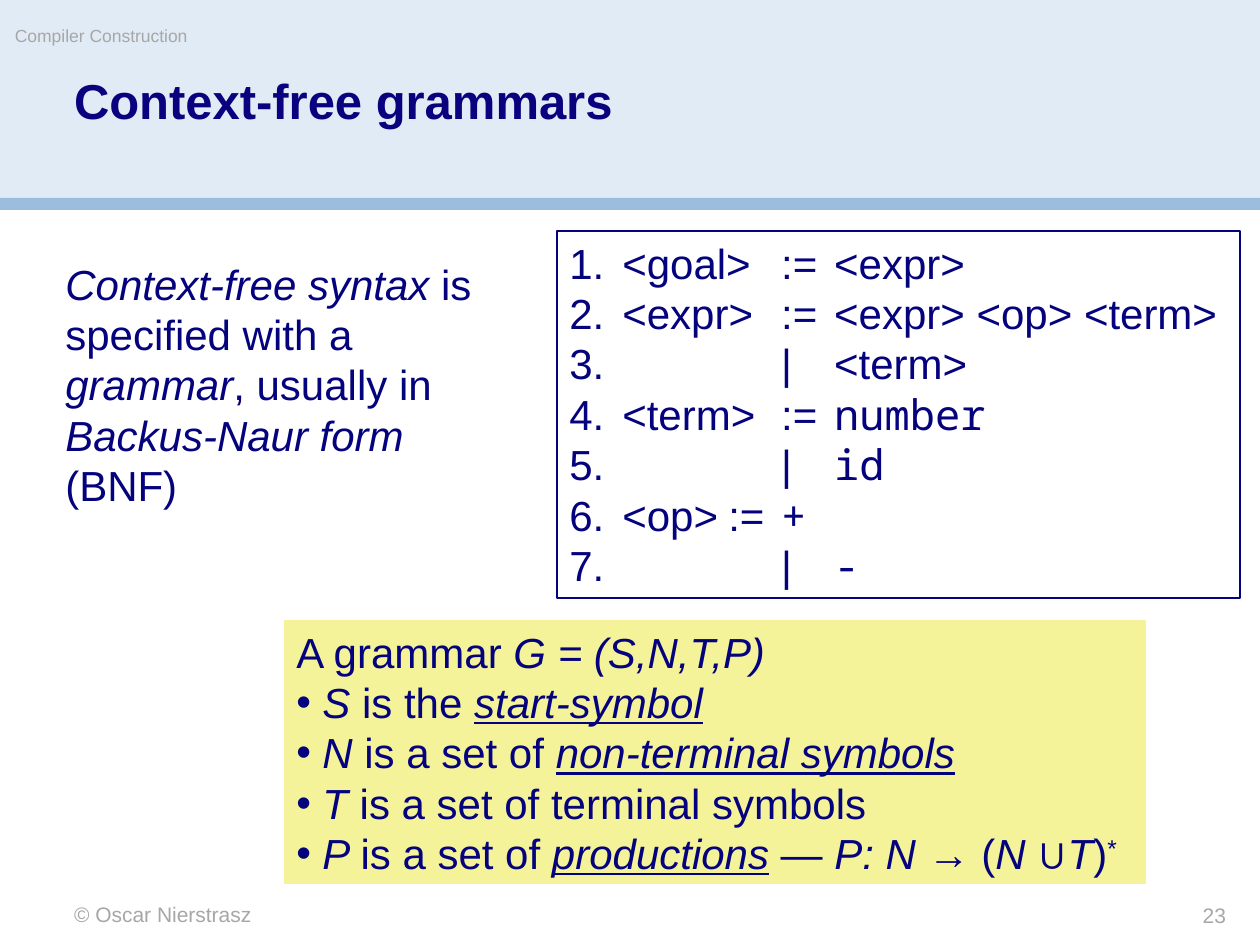
from lxml.etree import SubElement
from pptx import Presentation
from pptx.dml.color import RGBColor
from pptx.enum.shapes import MSO_SHAPE
from pptx.enum.text import MSO_ANCHOR, MSO_AUTO_SIZE, PP_ALIGN
from pptx.oxml.ns import qn
from pptx.util import Emu, Pt

SCALE = 914400 / 126
COLORS = {
    "navy": "05027D",
    "title": "0A017F",
    "grey": "A7A7A7",
    "header": "E1EBF5",
    "stripe": "9CBDDE",
    "yellow": "F5F399",
}
NUMBER = ("buAutoNum", "type", "arabicPeriod")
DOT = ("buChar", "char", "•")

INTRO = [
    [("Context-free syntax", "i"), (" is specified with a ", ""), ("grammar", "i"),
     (", usually in ", ""), ("Backus-Naur form ", "i"), ("(BNF)", "")],
]
RULES = [
    [("<goal>\t:=\t<expr>", "")],
    [("<expr>\t:=\t<expr> <op> <term>", "")],
    [(" \t\t\t|\t<term>", "")],
    [("<term>\t:=\t", ""), ("number", "m")],
    [(" \t\t\t|\t", ""), ("id", "m")],
    [("<op>\t:=\t", ""), ("+", "m")],
    [(" \t\t\t|\t", ""), ("-", "m")],
]
DEFINITION = [
    [("A grammar ", ""), ("G = (S,N,T,P)", "i")],
    [("S", "i"), (" is the ", ""), ("start-symbol", "iu")],
    [("N", "i"), (" is a set of ", ""), ("non-terminal symbols", "iu")],
    [("T", "i"), (" is a set of terminal symbols", "")],
    [("P ", "i"), ("is a set of ", ""), ("productions", "iu"), (" — ", ""),
     ("P: N ", "i"), ("→ (", ""), ("N ", "i"), ("∪", ""), ("T", "i"),
     (")", ""), ("*", "s")],
]


def px(length):
    return Emu(round(length * SCALE))


def rgb(name):
    return RGBColor.from_string(COLORS[name])


class SlideBuilder:
    font = "Arial"
    mono = "Noto Sans Mono"
    body_size = 24

    def __init__(self, page):
        self.page = page

    def box(self, left, top, width, height, fill=None, line=None):
        box = self.page.shapes.add_shape(
            MSO_SHAPE.RECTANGLE, px(left), px(top), px(width), px(height))
        box.shadow.inherit = False
        if fill:
            box.fill.solid()
            box.fill.fore_color.rgb = rgb(fill)
        else:
            box.fill.background()
        if line:
            box.line.color.rgb = rgb(line)
            box.line.width = Pt(0.75)
        else:
            box.line.fill.background()
        return box

    def text_box(self, left, top, width, height):
        return self.page.shapes.add_textbox(px(left), px(top), px(width), px(height))

    def style(self, font, size, color):
        font.name = self.font
        font.size = Pt(size)
        font.color.rgb = rgb(color)

    def label(self, text, left, top, width, height, size, color="grey",
              bold=False, align=PP_ALIGN.LEFT, spacing=None):
        frame = self.text_box(left, top, width, height).text_frame
        frame.word_wrap = True
        frame.margin_left = frame.margin_right = 0
        frame.margin_top = frame.margin_bottom = 0
        frame.text = text
        para = frame.paragraphs[0]
        para.alignment = align
        para.line_spacing = spacing
        span = para.runs[0]
        self.style(span.font, size, color)
        span.font.bold = bold

    def body(self, box, lines, indent=0, bullet=None, plain_lines=0):
        frame = box.text_frame
        frame.word_wrap = True
        frame.auto_size = MSO_AUTO_SIZE.SHAPE_TO_FIT_TEXT
        frame.vertical_anchor = MSO_ANCHOR.TOP
        for index, line in enumerate(lines):
            para = frame.paragraphs[0] if index == 0 else frame.add_paragraph()
            para.alignment = PP_ALIGN.LEFT
            if indent:
                self.indent(para, indent, bullet if index >= plain_lines else None)
            for text, marks in line:
                self.span(para, text, marks)

    def indent(self, para, indent, bullet):
        properties = para._p.get_or_add_pPr()
        properties.set("marL", str(px(indent)))
        properties.set("indent", str(-px(indent)))
        properties.set("defTabSz", str(px(indent)))
        if bullet:
            tag, attribute, value = bullet
            SubElement(properties, qn("a:buFont")).set("typeface", self.font)
            SubElement(properties, qn(f"a:{tag}")).set(attribute, value)

    def span(self, para, text, marks):
        span = para.add_run()
        span.text = text
        self.style(span.font, self.body_size, "navy")
        if "m" in marks:
            span.font.name = self.mono
        if "i" in marks:
            span.font.italic = True
        if "u" in marks:
            span.font.underline = True
        if "s" in marks:
            span._r.get_or_add_rPr().set("baseline", "30000")


def main():
    deck = Presentation()
    deck.slide_width, deck.slide_height = px(1260), px(945)
    page = deck.slides.add_slide(deck.slide_layouts[6])
    builder = SlideBuilder(page)

    builder.box(0, 0, 1260, 199, fill="header")
    builder.box(0, 198, 1260, 12, fill="stripe")
    builder.label("© Oscar Nierstrasz", 74, 902, 525, 25, 12)
    builder.label("Compiler Construction", 15, 25, 743, 35, 10)
    builder.label("Context-free grammars", 74, 77, 1113, 112, 28,
                  color="title", bold=True, spacing=0.9)
    builder.body(builder.box(557, 231, 683, 367, line="navy"), RULES,
                 indent=53, bullet=NUMBER)
    builder.body(builder.text_box(53, 252, 431, 265), INTRO)
    builder.body(builder.box(284, 620, 862, 264, fill="yellow"), DEFINITION,
                 indent=26, bullet=DOT, plain_lines=1)
    builder.label("23", 1040, 903, 186, 25, 12, align=PP_ALIGN.RIGHT)

    deck.save("out.pptx")


if __name__ == "__main__":
    main()
